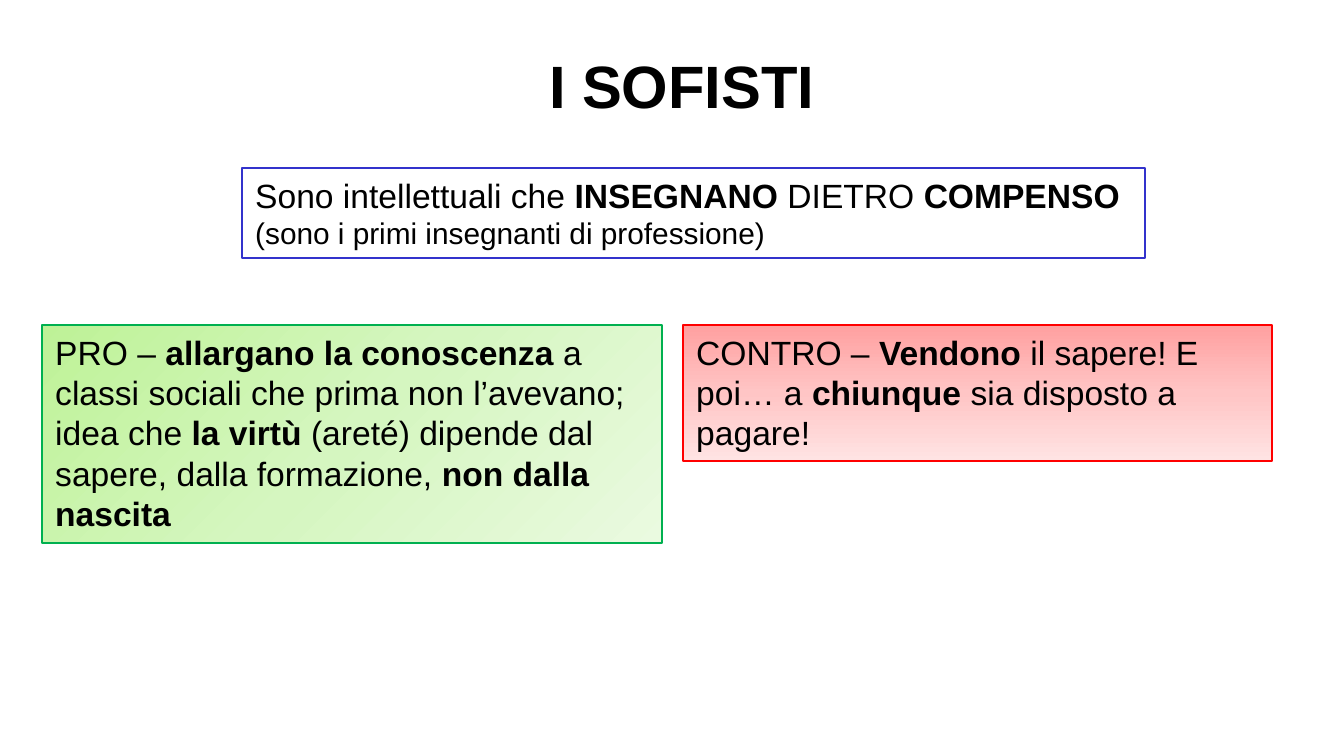
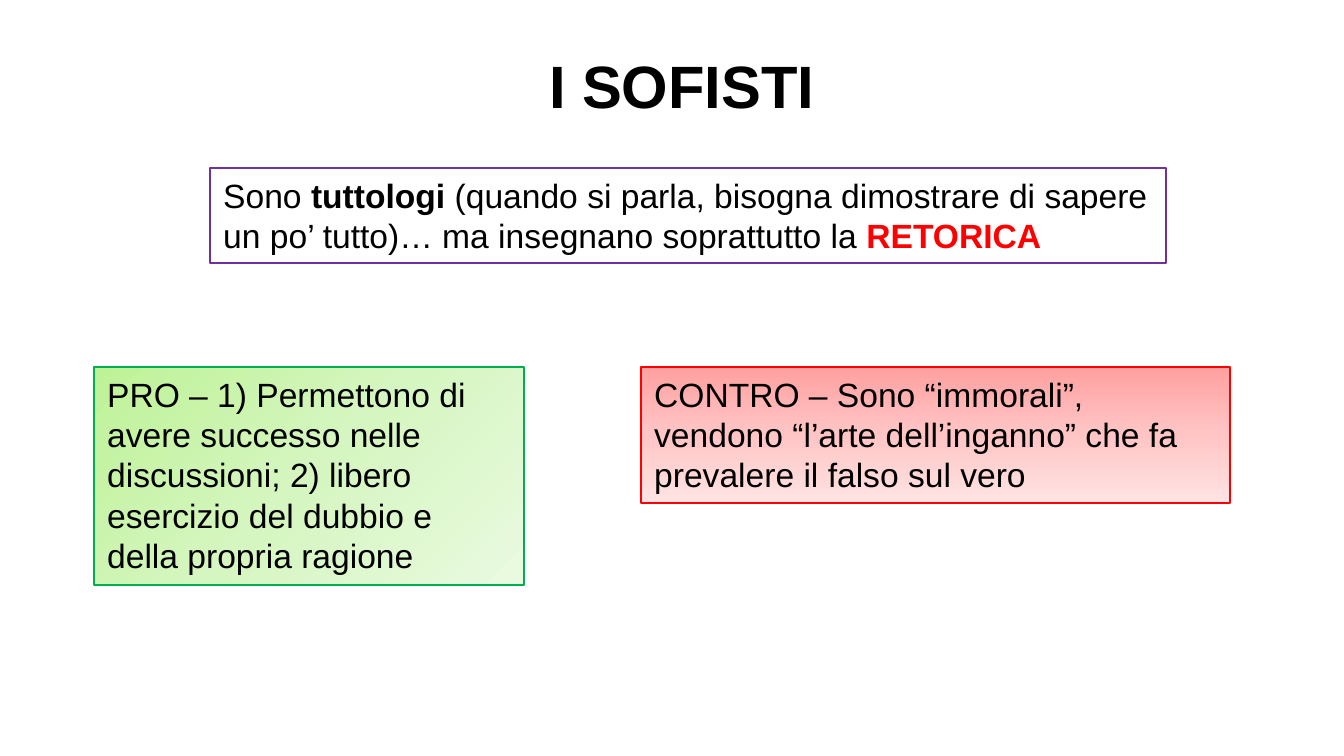
"""Builds two slides on the Sophists, each weighing a claim with pros and cons."""
from copy import deepcopy
from dataclasses import dataclass

from pptx import Presentation
from pptx.dml.color import RGBColor
from pptx.enum.shapes import MSO_SHAPE
from pptx.enum.text import MSO_ANCHOR, MSO_AUTO_SIZE, PP_ALIGN
from pptx.oxml.ns import qn
from pptx.util import Emu, Pt

EMU_PER_PX = 914400 / 134.4
FONT = "Arial"
BLACK = RGBColor(0x00, 0x00, 0x00)
RED = RGBColor(0xFF, 0x00, 0x00)
GREEN = RGBColor(0x00, 0xB0, 0x50)
BLUE = RGBColor(0x33, 0x33, 0xCC)
PURPLE = RGBColor(0x70, 0x30, 0xA0)
GREEN_SHADES = [RGBColor(0xBE, 0xF2, 0x97), RGBColor(0xD5, 0xF6, 0xC0), RGBColor(0xEA, 0xFA, 0xE0)]
RED_SHADES = [RGBColor(0xFF, 0xA0, 0xA0), RGBColor(0xFF, 0xC5, 0xC5), RGBColor(0xFF, 0xE3, 0xE3)]
CONTRO_WIDTH, CONTRO_HEIGHT = 589, 136
PRO_HEIGHT = 218
INTRO_TOP = 168


@dataclass
class Span:
    text: str
    bold: bool = False
    size: int = 18
    color: RGBColor = BLACK


def px(*lengths):
    return [Emu(round(length * EMU_PER_PX)) for length in lengths]


def write_text(shape, paragraphs, alignment=PP_ALIGN.LEFT):
    frame = shape.text_frame
    frame.word_wrap = True
    frame.auto_size = MSO_AUTO_SIZE.SHAPE_TO_FIT_TEXT
    frame.vertical_anchor = MSO_ANCHOR.TOP
    for index, spans in enumerate(paragraphs):
        paragraph = frame.add_paragraph() if index else frame.paragraphs[0]
        paragraph.alignment = alignment
        for span in spans:
            run = paragraph.add_run()
            run.text = span.text
            run.font.name = FONT
            run.font.size = Pt(span.size)
            run.font.bold = span.bold
            run.font.color.rgb = span.color


def fill_gradient(shape, shades, angle):
    shape.fill.gradient()
    shape.fill.gradient_angle = 360 - angle
    stop_list = shape._element.spPr.find(qn("a:gradFill")).find(qn("a:gsLst"))
    stop_list.append(deepcopy(stop_list[-1]))
    for index, (stop, shade) in enumerate(zip(shape.fill.gradient_stops, shades)):
        stop.position = index / (len(shades) - 1)
        stop.color.rgb = shade


def add_box(slide, bounds, border, paragraphs):
    shape = slide.shapes.add_shape(MSO_SHAPE.RECTANGLE, *px(*bounds))
    shape.shadow.inherit = False
    shape.fill.background()
    shape.line.color.rgb = border
    shape.line.width = Pt(0.75)
    write_text(shape, paragraphs)
    return shape


def add_pro(slide, left, top, width, spans):
    shape = add_box(slide, (left, top, width, PRO_HEIGHT), GREEN, [spans])
    fill_gradient(shape, GREEN_SHADES, 45)


def add_contro(slide, left, top, spans):
    shape = add_box(slide, (left, top, CONTRO_WIDTH, CONTRO_HEIGHT), RED, [spans])
    fill_gradient(shape, RED_SHADES, 90)


def add_titled_slide(presentation):
    slide = presentation.slides.add_slide(presentation.slide_layouts[6])
    title = slide.shapes.add_textbox(*px(105, 42, 1154, 86))
    write_text(title, [[Span("I SOFISTI", True, 32)]], PP_ALIGN.CENTER)
    return slide


def build_teaching_slide(presentation):
    slide = add_titled_slide(presentation)
    top = 325
    add_contro(slide, 683, top, [
        Span("CONTRO – "),
        Span("Vendono", True),
        Span(" il sapere! E poi… a "),
        Span("chiunque", True),
        Span(" sia disposto a pagare!"),
    ])
    add_box(slide, (242, INTRO_TOP, 903, 90), BLUE, [
        [
            Span("Sono intellettuali che "),
            Span("INSEGNANO", True),
            Span(" DIETRO "),
            Span("COMPENSO", True),
        ],
        [Span("(sono i primi insegnanti di professione)", size=16)],
    ])
    add_pro(slide, 42, top, 620, [
        Span("PRO – "),
        Span("allargano la conoscenza ", True),
        Span("a classi sociali che prima non l’avevano; idea che "),
        Span("la virtù ", True),
        Span("(areté) dipende dal sapere, dalla formazione, "),
        Span("non dalla nascita", True),
    ])


def build_rhetoric_slide(presentation):
    slide = add_titled_slide(presentation)
    top = 367
    add_box(slide, (210, INTRO_TOP, 956, 95), PURPLE, [[
        Span("Sono "),
        Span("tuttologi", True),
        Span(" (quando si parla, bisogna dimostrare di sapere un po’ tutto)… "
             "ma insegnano soprattutto la "),
        Span("RETORICA", True, color=RED),
    ]])
    add_pro(slide, 94, top, 430, [
        Span("PRO – 1) Permettono di avere successo nelle discussioni; "
             "2) libero esercizio del dubbio e della propria ragione"),
    ])
    add_contro(slide, 641, top, [
        Span("CONTRO – Sono “immorali”, vendono “l’arte dell’inganno” "
             "che fa prevalere il falso sul vero"),
    ])


def main():
    presentation = Presentation()
    presentation.slide_width, presentation.slide_height = px(1344, 756)
    build_teaching_slide(presentation)
    build_rhetoric_slide(presentation)
    presentation.save("out.pptx")


if __name__ == "__main__":
    main()
